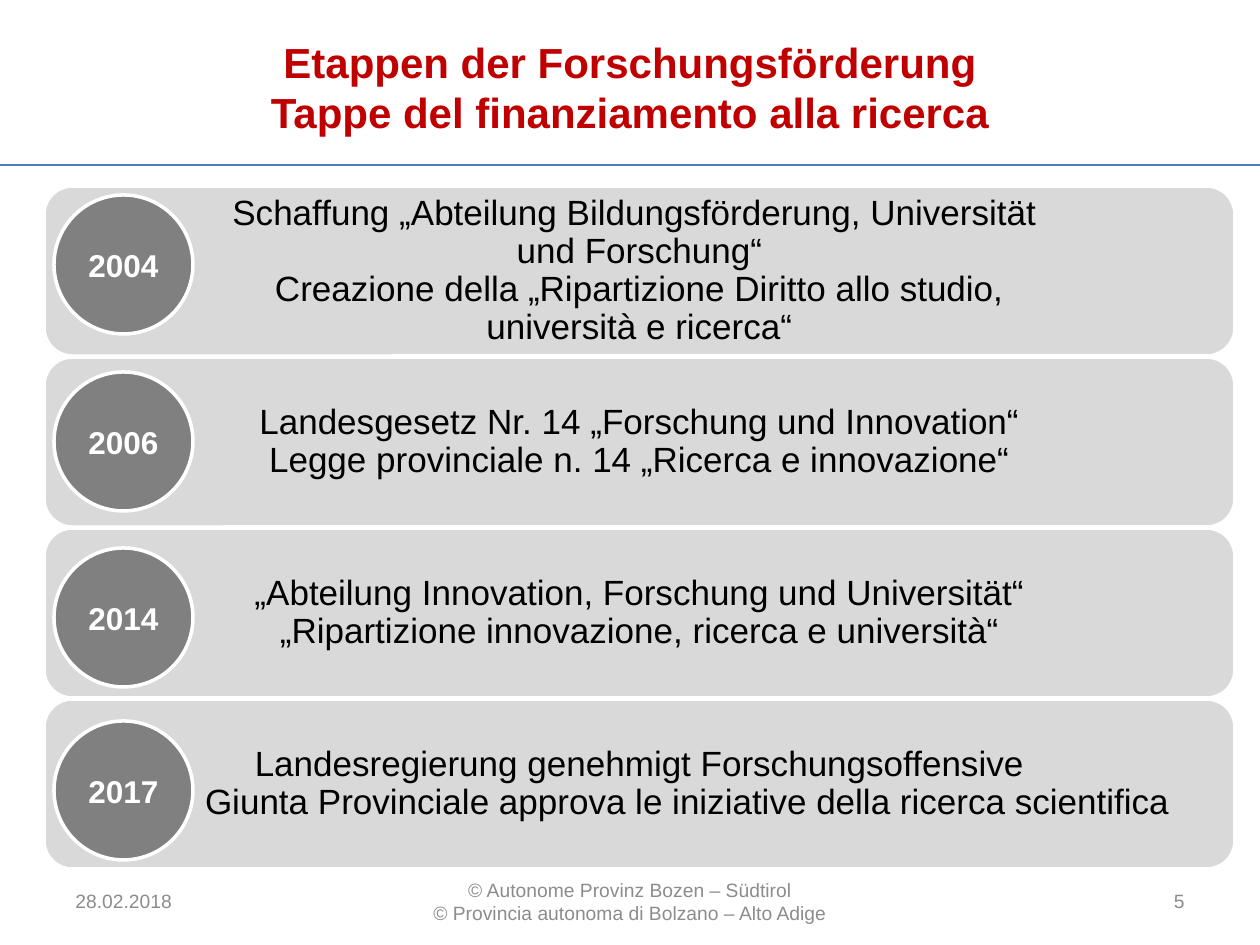
from pptx import Presentation
from pptx.dml.color import RGBColor
from pptx.enum.shapes import MSO_CONNECTOR, MSO_SHAPE
from pptx.enum.text import MSO_ANCHOR, MSO_AUTO_SIZE, PP_ALIGN
from pptx.oxml.ns import qn
from pptx.util import Emu, Pt

SCALE = 914400 / 126
RED = RGBColor(0xC0, 0x00, 0x00)
BLUE = RGBColor(0x4B, 0x7E, 0xBC)
GREY = RGBColor(0x8C, 0x8C, 0x8C)
PALE = RGBColor(0xD9, 0xD9, 0xD9)
DARK = RGBColor(0x80, 0x80, 0x80)
WHITE = RGBColor(0xFF, 0xFF, 0xFF)
BLACK = RGBColor(0x00, 0x00, 0x00)

# Year, top of its disc, paragraphs as (text, left indent); \v breaks a line.
STAGES = [
    ("2004", 195, [("Schaffung „Abteilung Bildungsförderung, Universität \v"
                    "und Forschung“\v"
                    "Creazione della „Ripartizione Diritto allo studio,\v"
                    "università e ricerca“", 0)]),
    ("2006", 372, [("Landesgesetz Nr. 14 „Forschung und Innovation“\v"
                    "Legge provinciale n. 14 „Ricerca e innovazione“", 0)]),
    ("2014", 548, [("„Abteilung Innovation, Forschung und Universität“\v"
                    "„Ripartizione innovazione, ricerca e università“", 0)]),
    ("2017", 721, [("Landesregierung genehmigt Forschungsoffensive", 0),
                   ("Giunta Provinciale approva le iniziative "
                    "della ricerca scientifica", 96)]),
]
FOOTER = [
    (63, 294, PP_ALIGN.LEFT, [("28.02.2018", 0)]),
    (412, 436, PP_ALIGN.CENTER,
     [("© Autonome Provinz Bozen – Südtirol", 0),
      ("© Provincia autonoma di Bolzano – Alto Adige", 0)]),
    (903, 294, PP_ALIGN.RIGHT, [("5", 0)]),
]


def px(num):
    return Emu(round(num * SCALE))


def write(shape, paras, size, color, bold=False, align=PP_ALIGN.CENTER,
          space=1.0):
    """Fill a shape with (text, indent) paragraphs in one style."""
    frame = shape.text_frame
    frame.word_wrap = True
    frame.auto_size = MSO_AUTO_SIZE.NONE
    frame.vertical_anchor = MSO_ANCHOR.MIDDLE
    frame.text = "\n".join(text for text, _ in paras)
    for para, (_, indent) in zip(frame.paragraphs, paras):
        para.alignment = align
        para.line_spacing = space
        if indent:
            para._p.get_or_add_pPr().set("marL", str(px(indent)))
        font = para.font
        font.name, font.size, font.bold = "Arial", Pt(size), bold
        font.color.rgb = color


def add_form(slide, kind, box, fill):
    form = slide.shapes.add_shape(kind, *map(px, box))
    form.shadow.inherit = False
    form.fill.solid()
    form.fill.fore_color.rgb = fill
    form.line.color.rgb = WHITE
    form.line.width = Pt(2)
    return form


def add_title(slide):
    title = slide.shapes.title
    title.left, title.top, title.width, title.height = map(
        px, (63, 8, 1134, 158))
    write(title, [("Etappen der Forschungsförderung\v"
                   "Tappe del finanziamento alla ricerca", 0)], 24, RED, True)


def add_rule(slide):
    rule = slide.shapes.add_connector(
        MSO_CONNECTOR.STRAIGHT, *map(px, (0, 165, 1260, 165)))
    rule.line.color.rgb = BLUE
    rule.line.width = Pt(1)
    props = rule._element.spPr
    props.append(props.makeelement(qn("a:effectLst"), {}))


def add_stage(slide, row, year, top, paras):
    bar = add_form(slide, MSO_SHAPE.ROUNDED_RECTANGLE,
                   (44, 186 + 171 * row, 1191, 170), PALE)
    write(bar, paras, 20, BLACK, space=0.9)
    disc = add_form(slide, MSO_SHAPE.OVAL, (54, top, 139, 139), DARK)
    write(disc, [(year, 0)], 18, WHITE, True)


def add_footer(slide):
    for left, width, align, paras in FOOTER:
        box = slide.shapes.add_textbox(*map(px, (left, 876, width, 50)))
        write(box, paras, 11, GREY, align=align)


def main():
    deck = Presentation()
    deck.slide_width, deck.slide_height = px(1260), px(945)
    slide = deck.slides.add_slide(deck.slide_layouts[5])
    add_rule(slide)
    add_title(slide)
    add_footer(slide)
    for row, stage in enumerate(STAGES):
        add_stage(slide, row, *stage)
    deck.save("out.pptx")


if __name__ == "__main__":
    main()
